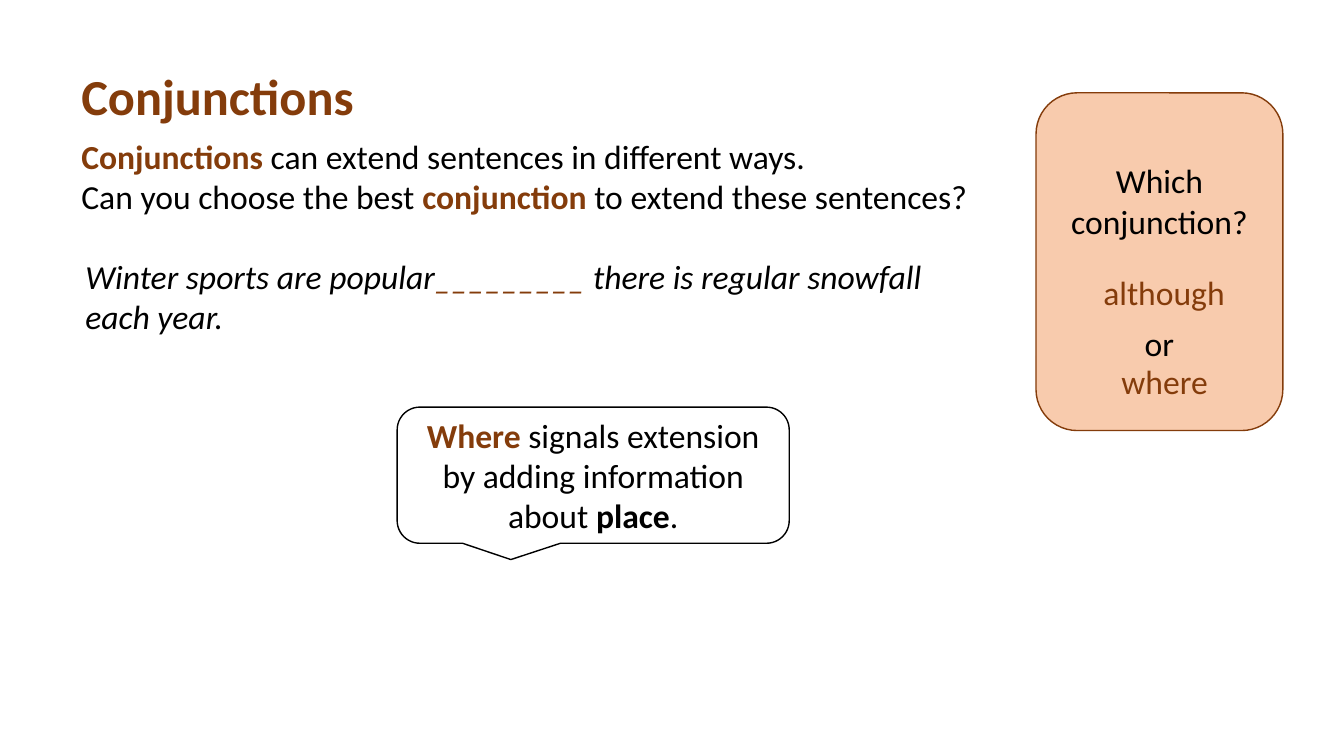
import dataclasses

import pptx
import pptx.dml.color
import pptx.enum.shapes
import pptx.enum.text
import pptx.util

Cm = pptx.util.Cm
Pt = pptx.util.Pt
RGB = pptx.dml.color.RGBColor
Kind = pptx.enum.shapes.MSO_SHAPE
Align = pptx.enum.text.PP_ALIGN
Anchor = pptx.enum.text.MSO_ANCHOR


@dataclasses.dataclass(frozen=True)
class Theme:
    font: str = "Calibri"
    head: int = 36
    body: int = 24
    brown: RGB = RGB(0x84, 0x3C, 0x0B)
    peach: RGB = RGB(0xF8, 0xCB, 0xAD)
    black: RGB = RGB(0, 0, 0)


THEME = Theme()


@dataclasses.dataclass(frozen=True)
class Run:
    text: str
    ink: RGB = THEME.black
    bold: bool = False


@dataclasses.dataclass(frozen=True)
class Line:
    runs: list[Run]
    size: int = THEME.body
    slant: bool = False
    gap: float = 0  # points above the line


@dataclasses.dataclass(frozen=True)
class Box:
    left: float
    top: float
    width: float
    height: float
    lines: list[Line]
    mid: bool = False
    wrap: bool = True

    def place(self) -> list[pptx.util.Length]:
        return [Cm(n) for n in (self.left, self.top, self.width, self.height)]


@dataclasses.dataclass(frozen=True)
class Panel:
    box: Box
    kind: Kind
    edge: RGB
    fill: RGB | None = None
    adjust: tuple[float, ...] = ()


def style(font, run: Run) -> None:
    font.color.rgb = run.ink
    font.bold = run.bold


def write(frame, box: Box) -> None:
    frame.word_wrap = box.wrap
    for i, line in enumerate(box.lines):
        para = frame.add_paragraph() if i else frame.paragraphs[0]
        para.alignment = Align.CENTER if box.mid else Align.LEFT
        if line.gap:
            para.space_before = Pt(line.gap)
        para.font.name = THEME.font
        para.font.size = Pt(line.size)
        para.font.italic = line.slant
        alike = len({(run.ink, run.bold) for run in line.runs}) == 1
        if alike:
            style(para.font, line.runs[0])
        for run in line.runs:
            part = para.add_run()
            part.text = run.text
            if not alike:
                style(part.font, run)


def add_text(slide, box: Box) -> None:
    write(slide.shapes.add_textbox(*box.place()).text_frame, box)


def add_panel(slide, panel: Panel) -> None:
    shape = slide.shapes.add_shape(panel.kind, *panel.box.place())
    shape.shadow.inherit = False
    if panel.fill is None:
        shape.fill.background()
    else:
        shape.fill.solid()
        shape.fill.fore_color.rgb = panel.fill
    shape.line.color.rgb = panel.edge
    shape.line.width = Pt(1)
    for i, value in enumerate(panel.adjust):
        shape.adjustments[i] = value
    shape.text_frame.vertical_anchor = Anchor.MIDDLE
    write(shape.text_frame, panel.box)


# Choice card: the gap leaves room for the first choice
CARD = Panel(
    Box(26.11, 2.34, 6.22, 8.51, [
        Line([Run("Which conjunction?")]),
        Line([Run("or")], gap=58.5),
    ], mid=True),
    Kind.ROUNDED_RECTANGLE, THEME.brown, THEME.peach)

# Hint in a speech bubble
HINT = Panel(
    Box(10.01, 10.26, 9.88, 3.43, [
        Line([Run("Where", THEME.brown, True),
              Run(" signals extension by adding information about "),
              Run("place", bold=True), Run(".")]),
    ], mid=True),
    Kind.ROUNDED_RECTANGULAR_CALLOUT, THEME.black, adjust=(-0.21, 0.62))

# Title, task, sentence and the two choices
TEXTS = [
    Box(1.8, 1.52, 29.36, 1.8, [
        Line([Run("Conjunctions", THEME.brown, True)], THEME.head)]),
    Box(1.8, 3.3, 28.5, 2.31, [
        Line([Run("Conjunctions", THEME.brown, True),
              Run(" can extend sentences in different ways.")]),
        Line([Run("Can you choose the best "),
              Run("conjunction", THEME.brown, True),
              Run(" to extend these sentences?")])]),
    Box(1.9, 6.32, 22.83, 2.31, [
        Line([Run("Winter sports are popular"),
              Run("_________ ", THEME.brown),
              Run("there is regular snowfall each year.")], slant=True)]),
    Box(27.99, 8.97, 2.72, 1.27, [Line([Run("where", THEME.brown)])],
        mid=True, wrap=False),
    Box(27.53, 6.73, 3.61, 1.27, [Line([Run("although", THEME.brown)])],
        mid=True, wrap=False),
]


def main() -> None:
    deck = pptx.Presentation()
    deck.slide_width, deck.slide_height = Cm(33.87), Cm(19.05)
    slide = deck.slides.add_slide(deck.slide_layouts[6])
    add_panel(slide, CARD)
    for box in TEXTS:
        add_text(slide, box)
    add_panel(slide, HINT)
    deck.save("out.pptx")


if __name__ == "__main__":
    main()
